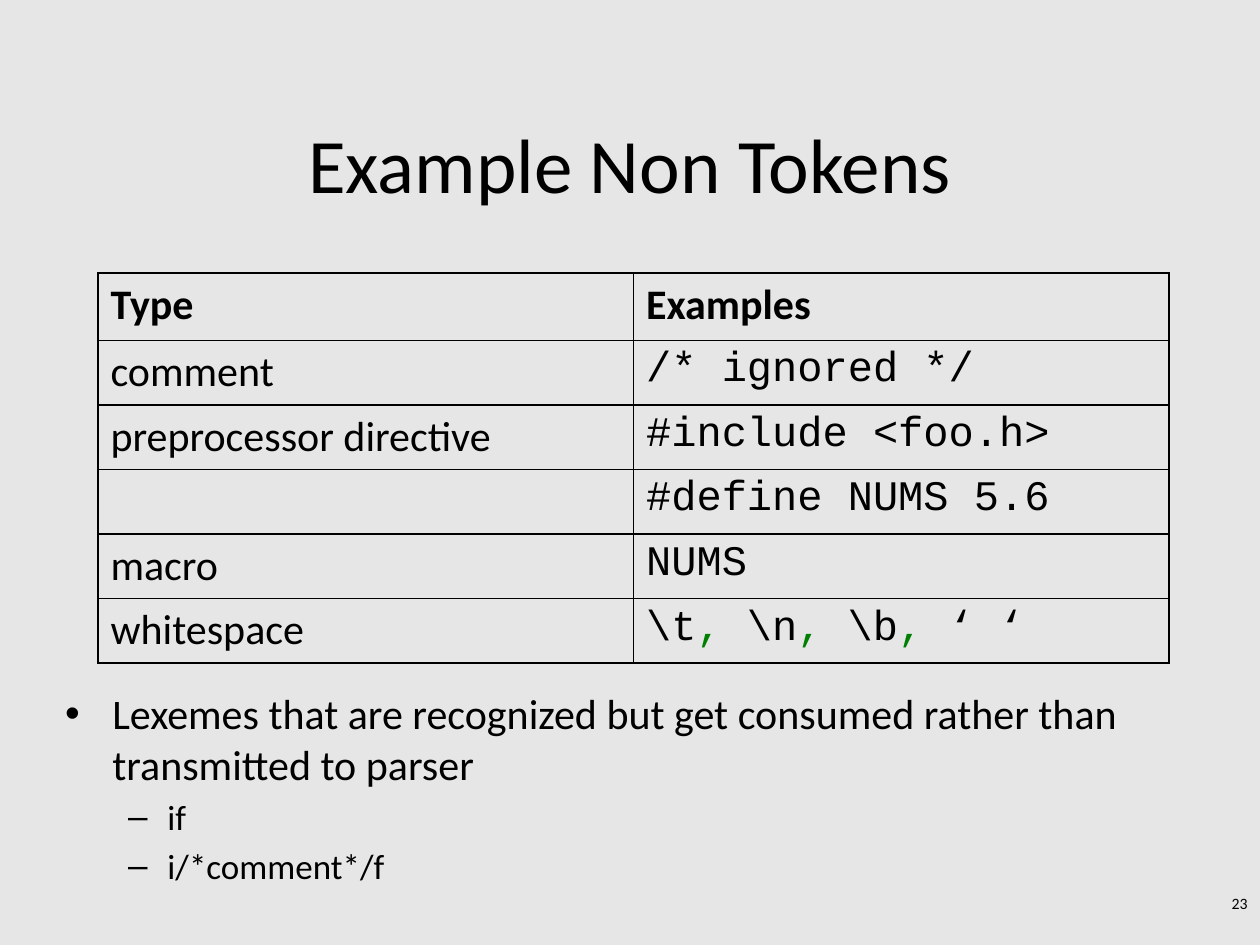
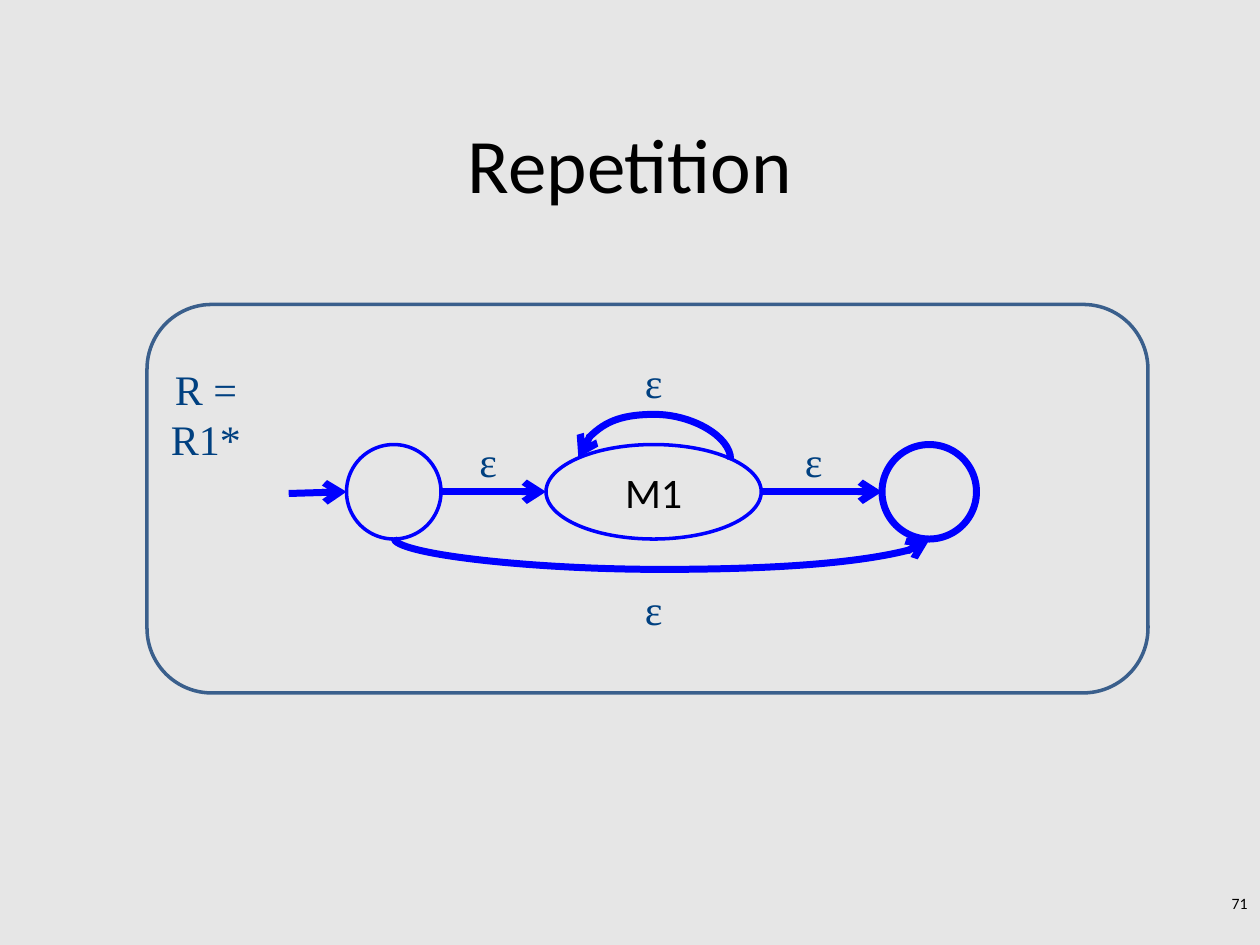
"""Builds two compiler-lecture slides: a table of non-tokens and a repetition automaton."""
from dataclasses import dataclass
from itertools import pairwise

from lxml.etree import SubElement
from pptx import Presentation
from pptx.dml.color import RGBColor
from pptx.enum.shapes import MSO_CONNECTOR as Link, MSO_SHAPE as Preset
from pptx.enum.text import MSO_ANCHOR as Anchor, MSO_AUTO_SIZE as AutoSize, PP_ALIGN as Align
from pptx.oxml.ns import qn
from pptx.util import Pt


@dataclass(frozen=True)
class Theme:
    paper: RGBColor = RGBColor(0xE6, 0xE6, 0xE6)
    ink: RGBColor = RGBColor(0, 0, 0)
    separator: RGBColor = RGBColor(0, 0x80, 0)
    label: RGBColor = RGBColor(0, 0x40, 0x80)
    frame: RGBColor = RGBColor(0x3A, 0x5F, 0x8C)
    automaton: RGBColor = RGBColor(0, 0, 0xFF)
    sans: str = "Calibri"
    mono: str = "Courier New"
    serif: str = "Times New Roman"
    title_size: int = 44
    text_size: int = 24
    sub_size: int = 20
    number_size: int = 9
    thin: int = 2
    thick: int = 4


def assign(target, values):
    for name, value in values.items():
        setattr(target, name, value)


class Deck:
    """Holds the theme and the slide being built."""

    def __init__(self, theme):
        self.theme = theme
        self.show = Presentation()
        assign(self.show, {"slide_width": Pt(720), "slide_height": Pt(540)})
        paper = self.show.slide_master.background.fill
        paper.solid()
        paper.fore_color.rgb = theme.paper

    def place(self, item, box):
        assign(item, dict(zip(("left", "top", "width", "height"), map(Pt, box))))

    def run(self, paragraph, text, size=None, face=None, color=None, bold=False):
        piece = paragraph.add_run()
        piece.text = text
        assign(piece.font, {"size": Pt(size or self.theme.text_size),
                            "name": face or self.theme.sans, "bold": bold})
        piece.font.color.rgb = color or self.theme.ink

    def slide(self, layout, title, number):
        self.page = self.show.slides.add_slide(self.show.slide_layouts[layout])
        heading = self.page.shapes.title
        self.place(heading, (54, 48, 612, 90))
        assign(heading.text_frame, {"vertical_anchor": Anchor.MIDDLE, "auto_size": AutoSize.NONE})
        paragraph = heading.text_frame.paragraphs[0]
        paragraph.alignment = Align.CENTER
        self.run(paragraph, title, self.theme.title_size)
        self.text((570, 507, 150, 21.6), number, Align.RIGHT, size=self.theme.number_size)

    def text(self, box, words, align=Align.CENTER, frame_format=None, **style):
        note = self.page.shapes.add_textbox(*map(Pt, box))
        assign(note.text_frame, {"word_wrap": True, **(frame_format or {})})
        paragraph = note.text_frame.paragraphs[0]
        paragraph.alignment = align
        self.run(paragraph, words, **style)

    def bullets(self, box, items):
        body = self.page.placeholders[1]
        self.place(body, box)
        body.text_frame.auto_size = AutoSize.NONE
        sizes = self.theme.text_size, self.theme.sub_size
        for index, (level, words) in enumerate(items):
            paragraph = body.text_frame.add_paragraph() if index else body.text_frame.paragraphs[0]
            paragraph.level = level
            self.run(paragraph, words, sizes[level])

    def table(self, box, rows, heights):
        grid = self.page.shapes.add_table(len(rows), len(rows[0]), *map(Pt, box)).table
        assign(grid, {"first_row": False, "horz_banding": False})
        for r, (row, height) in enumerate(zip(rows, heights)):
            grid.rows[r].height = Pt(height)
            for c, pieces in enumerate(row):
                cell = grid.cell(r, c)
                self.border(cell)
                cell.fill.background()
                for words, style in pieces:
                    self.run(cell.text_frame.paragraphs[0], words, **style)

    def border(self, cell):
        properties = cell._tc.get_or_add_tcPr()
        for side in ("lnL", "lnR", "lnT", "lnB"):
            edge = SubElement(properties, qn(f"a:{side}"), w=str(Pt(1)))
            fill = SubElement(edge, qn("a:solidFill"))
            SubElement(fill, qn("a:srgbClr"), val=str(self.theme.ink))

    def outline(self, preset, box, color, weight, words=""):
        figure = self.page.shapes.add_shape(preset, *map(Pt, box))
        figure.shadow.inherit = False
        figure.fill.background()
        figure.line.color.rgb = color
        figure.line.width = Pt(weight)
        if words:
            figure.text_frame.vertical_anchor = Anchor.MIDDLE
            paragraph = figure.text_frame.paragraphs[0]
            paragraph.alignment = Align.CENTER
            self.run(paragraph, words)
        return figure

    def arrow(self, start, end, kind=Link.STRAIGHT, **joints):
        link = self.page.shapes.add_connector(kind, *map(Pt, (*start, *end)))
        link.line.color.rgb = self.theme.automaton
        link.line.width = Pt(self.theme.thick)
        SubElement(link.line._get_or_add_ln(), qn("a:tailEnd"), type="arrow")
        SubElement(link._element.spPr, qn("a:effectLst"))
        ties = link._element.find(".//" + qn("p:cNvCxnSpPr"))
        for joint, (state, site) in joints.items():
            SubElement(ties, qn(f"a:{joint}"), id=str(state.shape_id), idx=str(site))
        return link

    def arc(self, start, end, bulge, flip, **joints):
        link = self.arrow(start, end, Link.CURVE, **joints)
        span = abs(end[0] - start[0])
        middle = (start[0] + end[0]) / 2
        self.place(link, (middle - 0.5, start[1] - span / 2, 1, span))
        turn = link._element.spPr.find(qn("a:xfrm"))
        for name, value in {"rot": "16200000", "flipH": "0", "flipV": "0", flip: "1"}.items():
            turn.set(name, value)
        guides = link._element.find(".//" + qn("a:avLst"))
        SubElement(guides, qn("a:gd"), name="adj1", fmla=f"val {round(bulge * 100000)}")


def non_tokens(deck):
    theme = deck.theme
    code, comma = {"face": theme.mono}, (",", {"face": theme.mono, "color": theme.separator})
    examples = [
        ("comment", [("/* ignored */", code)]),
        ("preprocessor directive", [("#include <foo.h>", code)]),
        ("", [("#define NUMS 5.6", code)]),
        ("macro", [("NUMS", code)]),
        ("whitespace", [("\\t", code), comma, (" \\n", code), comma,
                        (" \\b", code), comma, (" ‘ ‘", code)]),
    ]
    header = [[(name, {"bold": True})] for name in ("Type", "Examples")]
    rows = [header] + [[[(kind, {})] if kind else [], sample] for kind, sample in examples]
    deck.slide(1, "Example Non Tokens", "23")
    deck.table((56, 156, 612, 223), rows, [38.6] + [36.9] * len(examples))
    deck.bullets((30, 389.5, 658, 135.5), [
        (0, "Lexemes that are recognized but get consumed rather than transmitted to parser"),
        (1, "if"),
        (1, "i/*comment*/f"),
    ])


def repetition(deck):
    theme = deck.theme
    label = {"face": theme.serif, "color": theme.label}
    top, size, axis = 254, 54, 281
    bottom = top + size
    deck.slide(5, "Repetition", "71")
    deck.text((90, 204, 89.3, 36), "R = R1*", frame_format={"margin_right": Pt(41)}, **label)
    deck.outline(Preset.ROUNDED_RECTANGLE, (84, 174, 572, 222), theme.frame, theme.thin)
    states = [
        deck.outline(Preset.OVAL, (left, top, width, size), theme.automaton, weight, words)
        for left, width, weight, words in [(198, size, theme.thin, ""),
                                           (312, 123, theme.thin, "M1"),
                                           (504, size, theme.thick, "")]
    ]
    first, machine, final = states
    deck.arrow((165, 282), (198, axis), endCxn=(first, 2))
    for before, after in pairwise(states):
        deck.arrow(((before.left + before.width).pt if hasattr(before.left + before.width, "pt")
                    else (before.left + before.width) / Pt(1), axis),
                   (after.left.pt, axis), stCxn=(before, 6), endCxn=(after, 2))
    deck.arc((225, bottom), (531, bottom), 18, "flipH", stCxn=(first, 4), endCxn=(final, 4))
    deck.arc((417.5, 262), (330.5, 262), 25.91, "flipV", stCxn=(machine, 7), endCxn=(machine, 1))
    for left, height in [(264, 245.5), (450, 245.5), (358.5, 330), (358.5, 200)]:
        deck.text((left, height, 30, 36), "ε ", frame_format={"word_wrap": False}, **label)


def main():
    deck = Deck(Theme())
    non_tokens(deck)
    repetition(deck)
    deck.show.save("out.pptx")


if __name__ == "__main__":
    main()
